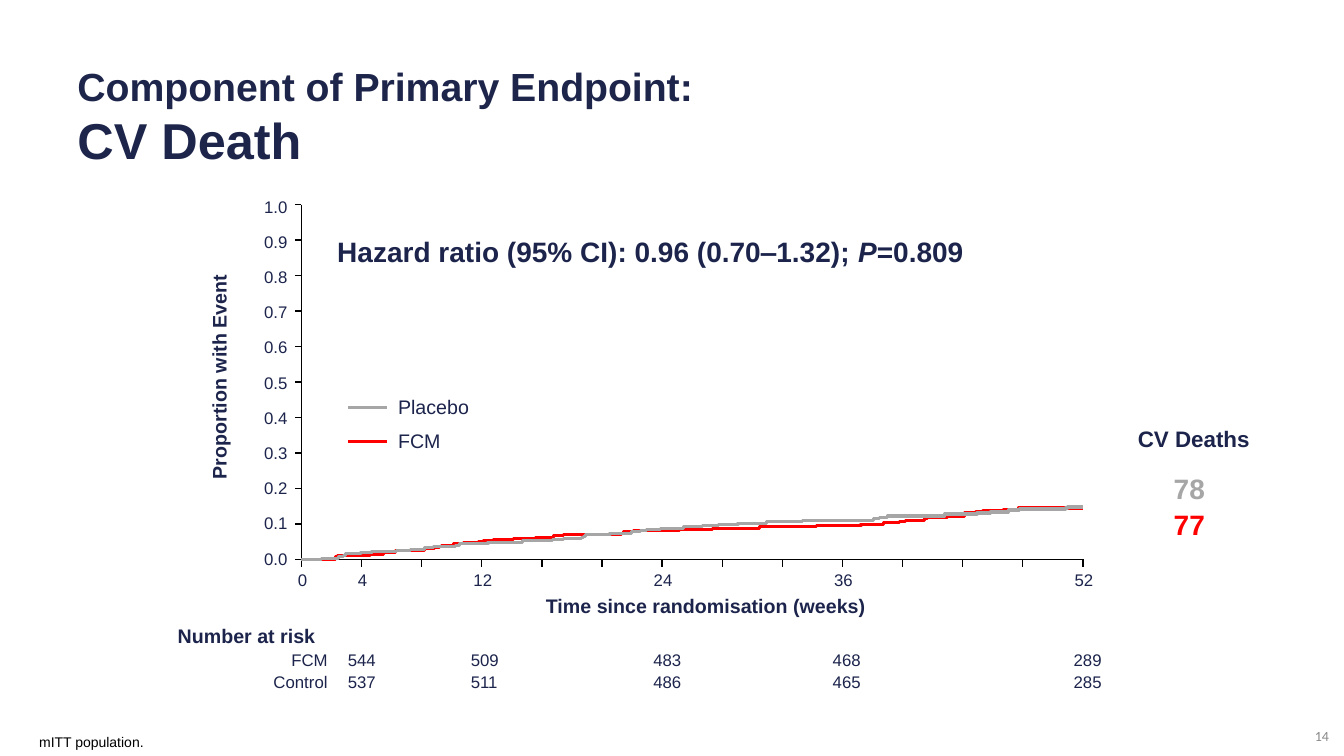
from lxml.etree import SubElement
from pptx import Presentation
from pptx.dml.color import RGBColor
from pptx.enum.shapes import MSO_CONNECTOR
from pptx.enum.text import MSO_ANCHOR, PP_ALIGN
from pptx.oxml.ns import qn
from pptx.util import Inches, Pt

COLORS = {"navy": "1C244C", "title": "1D254B", "placebo": "A6A6A6",
          "fcm": "FF0000", "axis": "000000", "number": "898989"}
LEFT, CENTER, RIGHT = PP_ALIGN.LEFT, PP_ALIGN.CENTER, PP_ALIGN.RIGHT

# Steps of each curve: distance from the origin and height, in 1/100 inch
FCM_STEPS = [
    (34, 3), (36, 4), (68, 5), (81, 7), (93, 9), (122, 11), (132, 12),
    (137, 13), (139, 14), (151, 16), (161, 17), (176, 18), (181, 19),
    (191, 20), (210, 21), (232, 22), (250, 24), (260, 25), (317, 26),
    (319, 28), (329, 29), (375, 30), (408, 31), (454, 33), (511, 34),
    (555, 35), (577, 37), (593, 38), (599, 39), (618, 41), (621, 42),
    (641, 43), (658, 46), (669, 47), (676, 48), (696, 49), (711, 51)]
PLACEBO_STEPS = [
    (20, 1), (37, 3), (42, 4), (44, 6), (59, 7), (70, 8), (94, 9), (108, 10),
    (122, 12), (131, 13), (153, 14), (157, 16), (185, 17), (219, 19),
    (249, 20), (260, 21), (278, 22), (280, 23), (282, 25), (306, 26),
    (327, 28), (336, 29), (342, 30), (356, 31), (379, 33), (398, 34),
    (414, 35), (433, 36), (461, 38), (497, 39), (567, 41), (573, 42),
    (581, 43), (638, 45), (670, 46), (683, 47), (701, 49), (712, 50),
    (758, 51), (760, 52)]
AT_RISK = [["FCM", "544", "509", "483", "468", "289"],
           ["Control", "537", "511", "486", "465", "285"]]


def rgb(name):
    return RGBColor.from_string(COLORS[name])


def style(p, size, color="navy", bold=False, align=LEFT, font="Arial"):
    p.alignment = align
    for r in p.runs:
        r.font.name, r.font.size, r.font.bold = font, Pt(size), bold
        r.font.color.rgb = rgb(color)


def add_text(slide, box, text, size, **look):
    """Add a one-paragraph text box; a list as text gives several runs."""
    tb = slide.shapes.add_textbox(*map(Inches, box))
    tf = tb.text_frame
    tf.word_wrap = True
    p = tf.paragraphs[0]
    if isinstance(text, list):
        for part in text:
            p.add_run().text = part
    else:
        p.text = text
    style(p, size, **look)
    return tb


def add_line(slide, x1, y1, x2, y2, color, width):
    line = slide.shapes.add_connector(
        MSO_CONNECTOR.STRAIGHT, *map(Inches, (x1, y1, x2, y2)))
    line.line.color.rgb = rgb(color)
    line.line.width = Pt(width)
    SubElement(line._element.spPr, qn("a:effectLst"))


def add_path(slide, points, color, width):
    start, *rest = [(Inches(x), Inches(y)) for x, y in points]
    builder = slide.shapes.build_freeform(*start)
    builder.add_line_segments(rest, close=False)
    sp = builder.convert_to_shape()
    sp.shadow.inherit = False
    sp.fill.background()
    sp.line.color.rgb = rgb(color)
    sp.line.width = Pt(width)


def add_title(slide, x, y, w, h):
    tb = add_text(slide, (x, y, w, h),
                  "Component of Primary Endpoint: \vCV Death", 28,
                  color="title", bold=True)
    tf = tb.text_frame
    tf.margin_top = Inches(0.1)
    tf.paragraphs[0].runs[-1].font.size = Pt(36)


def add_axes(slide, x, y, w, h):
    bottom, dx, dy = y + h, w / 13, h / 10
    for i in range(11):
        add_text(slide, (x - 0.61, y - 0.13 + i * 0.349, 0.57, 0.3),
                 f"{1 - i / 10:.1f}", 12, align=RIGHT)
        add_line(slide, x - 0.06, y + i * dy, x, y + i * dy, "axis", 1)
    for i in range(14):
        add_line(slide, x + i * dx, bottom, x + i * dx, bottom + 0.08, "axis", 1)
    add_path(slide, [(x, y), (x, bottom), (x + w, bottom)], "axis", 1)
    for week in (0, 4, 12, 24, 36, 52):
        add_text(slide, (x - 0.19 + week / 4 * dx, bottom + 0.05, 0.4, 0.3),
                 str(week), 12, align=CENTER)
    add_text(slide, (x + 1.68, bottom + 0.29, 4.66, 0.34),
             "Time since randomisation (weeks)", 14, bold=True, align=CENTER)
    label = add_text(slide, (x - 2.5, y + 1.54, 3.37, 0.34),
                     "Proportion with Event", 14, bold=True, align=CENTER)
    label.rotation = 270


def add_curve(slide, x, y, w, h, steps, color):
    bottom, height = y + h, 0
    points = [(x, bottom)]
    for dx, rise in steps:
        points.append((x + dx / 100, bottom - height))
        height = rise / 100
        points.append((x + dx / 100, bottom - height))
    points.append((x + w, bottom - height))
    add_path(slide, points, color, 2.25)


def add_legend(slide, x, y, w, row_h):
    for i, (name, color) in enumerate([("Placebo", "placebo"), ("FCM", "fcm")]):
        top = y + i * row_h
        add_line(slide, x, top + 0.17, x + 0.39, top + 0.17, color, 2)
        add_text(slide, (x + 0.4, top, w - 0.4, row_h), name, 14)


def add_plot(slide, x, y, w, h):
    box = (x, y, w, h)
    hazard = add_text(slide, (x + 0.2, y + 0.25, 6.52, 0.44),
                      ["Hazard ratio (95% CI): 0.96 (0.70‒1.32); ", "P", "=0.809"],
                      20, bold=True, align=CENTER)
    hazard.text_frame.paragraphs[0].runs[1].font.italic = True
    add_legend(slide, x + 0.46, y + 1.84, 1.7, 0.34)
    add_axes(slide, *box)
    add_curve(slide, *box, FCM_STEPS, "fcm")
    add_curve(slide, *box, PLACEBO_STEPS, "placebo")


def add_risk_table(slide, x, y, w, h):
    add_text(slide, (x - 1.21, y - 0.32, 2.19, 0.34), "Number at risk", 14,
             bold=True, align=CENTER)
    frame = slide.shapes.add_table(2, 6, *map(Inches, (x, y, w, h)))
    table = frame.table
    table.first_row = table.horz_banding = False
    for col, width in zip(table.columns, (0.79, 1.22, 1.81, 1.78, 2.39, 0.9)):
        col.width = Inches(width)
    for i, row in enumerate(AT_RISK):
        table.rows[i].height = Inches(h / 2)
        for j, value in enumerate(row):
            cell = table.cell(i, j)
            cell.fill.background()
            cell.margin_top = cell.margin_bottom = 0
            p = cell.text_frame.paragraphs[0]
            p.text = value
            style(p, 12, align=LEFT if j else RIGHT)


def add_deaths(slide, x, y, w):
    add_text(slide, (x, y, w, 0.37), "CV Deaths", 16, bold=True, align=CENTER)
    for i, (count, color) in enumerate([("78", "placebo"), ("77", "fcm")]):
        add_text(slide, (x + 0.28, y + 0.46 + i * 0.36, 1.39, 0.44), count, 20,
                 color=color, bold=True, align=CENTER)


def add_footer(slide, x, y, w):
    add_text(slide, (x, y, w, 0.27), "mITT population.", 10, color="axis")
    number = add_text(slide, (12.05, y - 0.05, 1.23, 0.25), "14", 10,
                      color="number", align=RIGHT, font="Calibri")
    number.text_frame.vertical_anchor = MSO_ANCHOR.MIDDLE


def main():
    prs = Presentation()
    prs.slide_width, prs.slide_height = Inches(13.33), Inches(7.5)
    slide = prs.slides.add_slide(prs.slide_layouts[6])
    add_title(slide, 0.67, 0.52, 12, 0.75)
    add_plot(slide, 2.99, 2.03, 7.75, 3.52)
    add_risk_table(slide, 2.56, 6.46, 8.89, 0.44)
    add_deaths(slide, 10.82, 4.17, 2.04)
    add_footer(slide, 0.29, 7.23, 12.61)
    prs.save("out.pptx")


if __name__ == "__main__":
    main()
